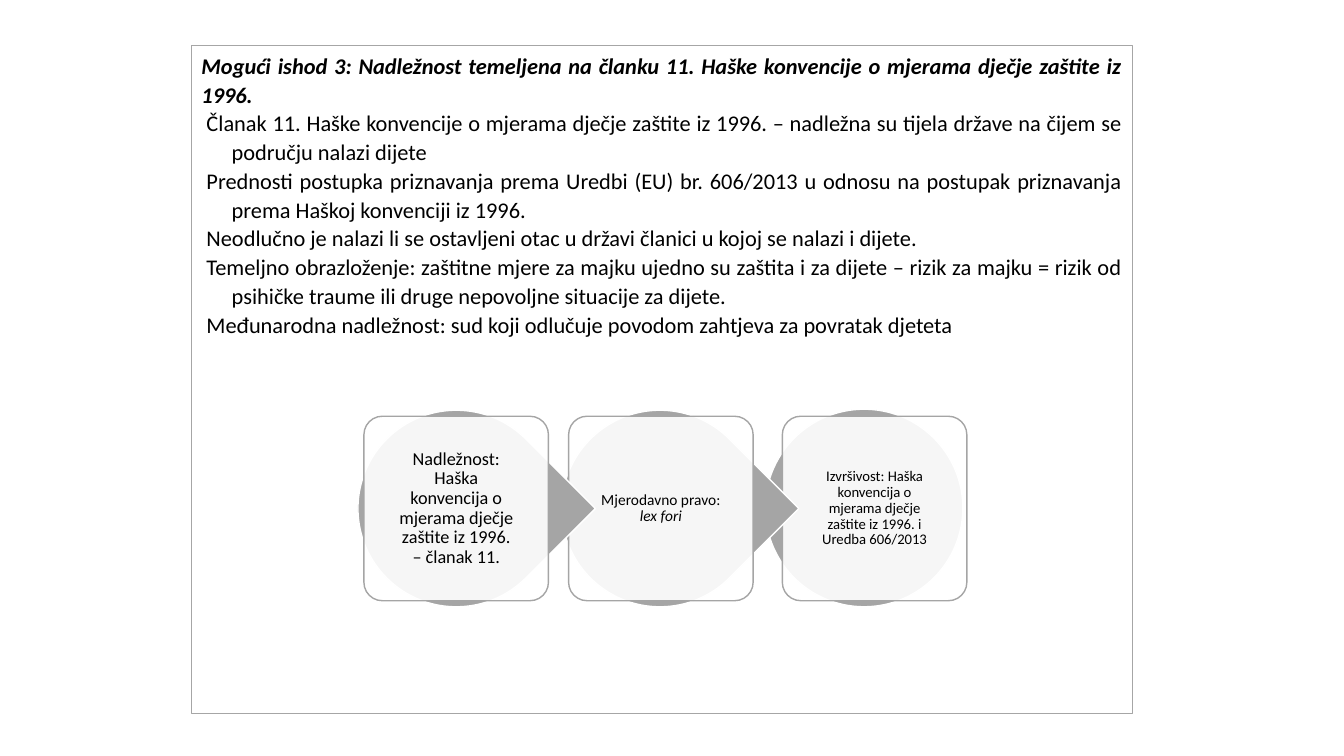
from dataclasses import dataclass

from lxml import etree
from pptx import Presentation
from pptx.dml.color import RGBColor
from pptx.enum.shapes import MSO_SHAPE
from pptx.enum.text import MSO_ANCHOR, PP_ALIGN
from pptx.oxml.ns import qn
from pptx.util import Inches, Pt

RECTANGLE = MSO_SHAPE.RECTANGLE
ROUNDED = MSO_SHAPE.ROUNDED_RECTANGLE
OVAL = MSO_SHAPE.OVAL
TEAR = MSO_SHAPE.TEAR
TOP = MSO_ANCHOR.TOP
MIDDLE = MSO_ANCHOR.MIDDLE
LEFT = PP_ALIGN.LEFT
CENTER = PP_ALIGN.CENTER
JUSTIFY = PP_ALIGN.JUSTIFY


@dataclass(frozen=True)
class Theme:
    font: str = "Calibri"
    text: RGBColor = RGBColor(0, 0, 0)
    white: RGBColor = RGBColor(255, 255, 255)
    frame: RGBColor = RGBColor(0xA6, 0xA6, 0xA6)
    accent: RGBColor = RGBColor(0xA5, 0xA5, 0xA5)
    body_size: float = 16
    frame_width: float = 0.75
    stage_width: float = 1
    card_opacity: int = 90


@dataclass(frozen=True)
class Box:
    left: float
    top: float
    width: float
    height: float

    def lengths(self) -> list:
        return [Inches(value) for value in (self.left, self.top, self.width, self.height)]


@dataclass(frozen=True)
class Point:
    text: str
    alignment: PP_ALIGN = JUSTIFY


@dataclass(frozen=True)
class Stage:
    marker: MSO_SHAPE
    marker_box: Box
    card_left: float
    size: float
    text: str
    italic_text: str = ""


THEME = Theme()
CARD_TOP = 4.13
CARD_SIDE = 1.83
LABEL_MARGIN = 0.3

HEADING = "Mogući ishod 3: Nadležnost temeljena na članku 11. Haške konvencije o mjerama dječje zaštite iz 1996."
POINTS = [
    Point("Članak 11. Haške konvencije o mjerama dječje zaštite iz 1996. – nadležna su tijela države "
          "na čijem se području nalazi dijete"),
    Point("Prednosti postupka priznavanja prema Uredbi (EU) br. 606/2013 u odnosu na postupak "
          "priznavanja prema Haškoj konvenciji iz 1996."),
    Point("Neodlučno je nalazi li se ostavljeni otac u državi članici u kojoj se nalazi i dijete.", LEFT),
    Point("Temeljno obrazloženje: zaštitne mjere za majku ujedno su zaštita i za dijete – rizik za majku "
          "= rizik od psihičke traume ili druge nepovoljne situacije za dijete."),
    Point("Međunarodna nadležnost: sud koji odlučuje povodom zahtjeva za povratak djeteta"),
]
STAGES = [
    Stage(OVAL, Box(7.59, 4.06, 1.96, 1.96), 7.76, 10.5,
          "Izvršivost: Haška konvencija o mjerama dječje zaštite iz 1996. i Uredba 606/2013"),
    Stage(TEAR, Box(5.57, 4.07, 1.95, 1.95), 5.64, 11, "Mjerodavno pravo: ", "lex fori"),
    Stage(TEAR, Box(3.55, 4.07, 1.95, 1.95), 3.61, 13,
          "Nadležnost: Haška konvencija o mjerama dječje zaštite iz 1996. – članak 11."),
]


def set_attributes(target, values: dict) -> None:
    for name, value in values.items():
        setattr(target, name, value)


def add_run(paragraph, text: str, size: float, bold: bool = False, italic: bool = False) -> None:
    run = paragraph.add_run()
    run.text = text
    set_attributes(run.font, {"name": THEME.font, "size": Pt(size), "bold": bold, "italic": italic})
    run.font.color.rgb = THEME.text


def add_figure(slide, kind: MSO_SHAPE, box: Box, fill: RGBColor, line: RGBColor, line_width: float):
    shape = slide.shapes.add_shape(kind, *box.lengths())
    shape.shadow.inherit = False
    shape.fill.solid()
    shape.fill.fore_color.rgb = fill
    shape.line.color.rgb = line
    shape.line.width = Pt(line_width)
    return shape


def set_opacity(shape, percent: int) -> None:
    color = shape._element.spPr.find(qn("a:solidFill")).find(qn("a:srgbClr"))
    etree.SubElement(color, qn("a:alpha")).set("val", str(percent * 1000))


def add_outcome(slide) -> None:
    shape = add_figure(slide, RECTANGLE, Box(1.9, 0.45, 9.33, 6.63),
                       THEME.white, THEME.frame, THEME.frame_width)
    frame = shape.text_frame
    set_attributes(frame, {"word_wrap": True, "vertical_anchor": TOP})
    heading = frame.paragraphs[0]
    set_attributes(heading, {"alignment": JUSTIFY, "line_spacing": 1.07})
    add_run(heading, HEADING, THEME.body_size, bold=True, italic=True)
    for point in POINTS:
        paragraph = frame.add_paragraph()
        set_attributes(paragraph, {"alignment": point.alignment, "line_spacing": 1.07})
        properties = paragraph._p.get_or_add_pPr()
        properties.set("marL", str(Inches(0.3)))
        properties.set("indent", str(Inches(-0.25)))
        add_run(paragraph, point.text, THEME.body_size)


def add_stage(slide, stage: Stage) -> None:
    marker = add_figure(slide, stage.marker, stage.marker_box,
                        THEME.accent, THEME.white, THEME.stage_width)
    if stage.marker == TEAR:
        marker.rotation = 45

    card = add_figure(slide, ROUNDED, Box(stage.card_left, CARD_TOP, CARD_SIDE, CARD_SIDE),
                      THEME.white, THEME.accent, THEME.stage_width)
    card.adjustments[0] = 0.1
    set_opacity(card, THEME.card_opacity)

    label_side = CARD_SIDE - 2 * LABEL_MARGIN
    label_box = Box(stage.card_left + LABEL_MARGIN, CARD_TOP + LABEL_MARGIN, label_side, label_side)
    frame = slide.shapes.add_textbox(*label_box.lengths()).text_frame
    inset = Inches(0.02)
    set_attributes(frame, {"word_wrap": True, "vertical_anchor": MIDDLE, "margin_left": inset,
                           "margin_top": inset, "margin_right": inset, "margin_bottom": inset})
    paragraph = frame.paragraphs[0]
    set_attributes(paragraph, {"alignment": CENTER, "line_spacing": 0.9})
    add_run(paragraph, stage.text, stage.size)
    if stage.italic_text:
        add_run(paragraph, stage.italic_text, stage.size, italic=True)


def main() -> None:
    presentation = Presentation()
    presentation.slide_width = Inches(13.33)
    presentation.slide_height = Inches(7.5)
    slide = presentation.slides.add_slide(presentation.slide_layouts[6])
    add_outcome(slide)
    for stage in STAGES:
        add_stage(slide, stage)
    presentation.save("out.pptx")


if __name__ == "__main__":
    main()
